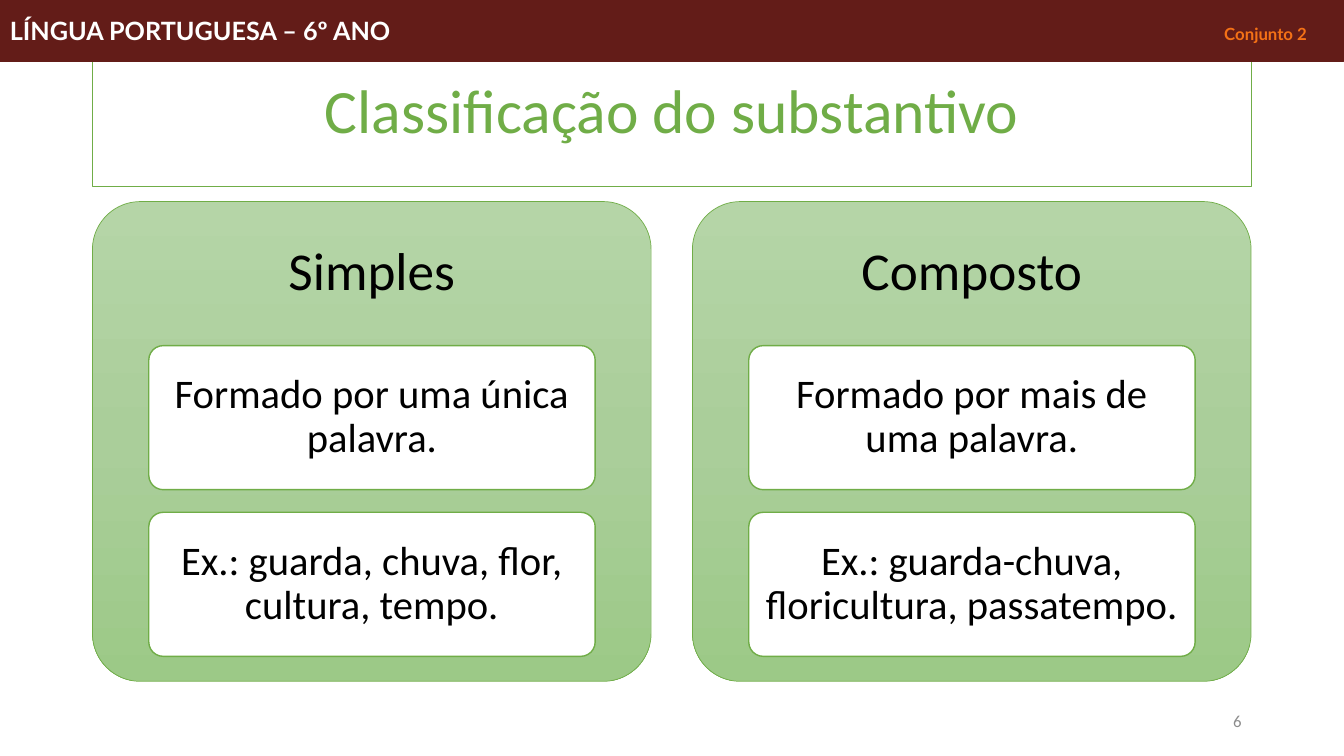
from copy import deepcopy
from dataclasses import dataclass

from lxml.etree import SubElement
from pptx import Presentation
from pptx.dml.color import RGBColor
from pptx.enum.shapes import MSO_SHAPE
from pptx.enum.text import MSO_ANCHOR, MSO_AUTO_SIZE, PP_ALIGN
from pptx.oxml.ns import qn
from pptx.shapes.autoshape import Shape
from pptx.slide import Slide
from pptx.util import Cm, Pt

COLORS = {
    "green": "70AD47",
    "panel_top": "B5D5A7",
    "panel_middle": "AACE9A",
    "panel_bottom": "9CC987",
    "maroon": "631C18",
    "orange": "F47116",
    "white": "FFFFFF",
    "black": "000000",
    "gray": "8C8C8C",
}
MARGIN, CONTENT_WIDTH = 2.33, 29.21
PANEL_TOP, PANEL_WIDTH, PANEL_HEIGHT, PANEL_PITCH = 5.08, 14.08, 12.09, 15.12
HEADING_HEIGHT = 3.63
CARD_INDENT, CARD_WIDTH, CARD_HEIGHT, CARD_PITCH = 1.42, 11.25, 3.63, 4.2


@dataclass(frozen=True)
class Box:
    left: float
    top: float
    width: float
    height: float

    def lengths(self) -> tuple[Cm, Cm, Cm, Cm]:
        return Cm(self.left), Cm(self.top), Cm(self.width), Cm(self.height)


@dataclass(frozen=True)
class NounClass:
    heading: str
    cards: tuple[str, ...]


NOUN_CLASSES = (
    NounClass("Simples", (
        "Formado por uma única palavra.",
        "Ex.: guarda, chuva, flor, cultura, tempo.",
    )),
    NounClass("Composto", (
        "Formado por mais de uma palavra.",
        "Ex.: guarda-chuva, floricultura, passatempo.",
    )),
)


def color(name: str) -> RGBColor:
    return RGBColor.from_string(COLORS[name])


def write(shape: Shape, text: str, size: float, color_name: str,
          align: PP_ALIGN = PP_ALIGN.CENTER, spacing: float = 0.9) -> None:
    frame = shape.text_frame
    frame.word_wrap = True
    frame.auto_size = MSO_AUTO_SIZE.NONE
    frame.vertical_anchor = MSO_ANCHOR.MIDDLE
    frame.text = text
    paragraph = frame.paragraphs[0]
    paragraph.alignment = align
    paragraph.line_spacing = spacing
    paragraph.font.name = "Calibri"
    paragraph.font.size = Pt(size)
    paragraph.font.color.rgb = color(color_name)


def set_insets(shape: Shape, horizontal: float, vertical: float) -> None:
    frame = shape.text_frame
    frame.margin_left = frame.margin_right = Cm(horizontal)
    frame.margin_top = frame.margin_bottom = Cm(vertical)


def add_block(slide: Slide, kind: MSO_SHAPE, box: Box, fill: str,
              line: str, line_width: float) -> Shape:
    block = slide.shapes.add_shape(kind, *box.lengths())
    block.shadow.inherit = False
    block.fill.solid()
    block.fill.fore_color.rgb = color(fill)
    block.line.color.rgb = color(line)
    block.line.width = Pt(line_width)
    if kind == MSO_SHAPE.ROUNDED_RECTANGLE:
        block.adjustments[0] = 0.1
    return block


def shade_panel(panel: Shape) -> None:
    panel.fill.gradient()
    panel.fill.gradient_angle = 270
    first_stop = panel._element.spPr.find(".//" + qn("a:gs"))
    first_stop.addnext(deepcopy(first_stop))
    shades = ("panel_top", "panel_middle", "panel_bottom")
    for index, (stop, shade) in enumerate(zip(panel.fill.gradient_stops, shades)):
        stop.position = index / 2
        stop.color.rgb = color(shade)


def add_noun_class(slide: Slide, noun_class: NounClass, left: float) -> None:
    panel_box = Box(left, PANEL_TOP, PANEL_WIDTH, PANEL_HEIGHT)
    panel = add_block(slide, MSO_SHAPE.ROUNDED_RECTANGLE, panel_box,
                      "panel_middle", "green", 0.5)
    shade_panel(panel)
    heading_box = Box(left, PANEL_TOP, PANEL_WIDTH, HEADING_HEIGHT)
    heading = slide.shapes.add_textbox(*heading_box.lengths())
    write(heading, noun_class.heading, 38, "black")
    set_insets(heading, 0.4, 0.4)
    for row, text in enumerate(noun_class.cards):
        card_top = PANEL_TOP + HEADING_HEIGHT + row * CARD_PITCH
        card_box = Box(left + CARD_INDENT, card_top, CARD_WIDTH, CARD_HEIGHT)
        card = add_block(slide, MSO_SHAPE.ROUNDED_RECTANGLE, card_box,
                         "white", "green", 1)
        write(card, text, 29, "black")
        set_insets(card, 0.2, 0.15)


def format_title(slide: Slide) -> None:
    title = slide.shapes.title
    title.left, title.top, title.width, title.height = Box(
        MARGIN, 1.02, CONTENT_WIDTH, 3.68).lengths()
    title.line.color.rgb = color("green")
    title.line.width = Pt(0.75)
    write(title, "Classificação do substantivo", 44, "green")


def add_header(slide: Slide) -> None:
    header = add_block(slide, MSO_SHAPE.RECTANGLE, Box(0, 0, 33.87, 1.55),
                       "maroon", "maroon", 0.75)
    write(header, "LÍNGUA PORTUGUESA – 6º ANO\t", 18, "white", PP_ALIGN.LEFT, 1)
    paragraph = header.text_frame.paragraphs[0]
    paragraph.font.name = "Lato"
    paragraph.font.bold = True
    unit = paragraph.add_run()
    unit.text = "Conjunto 2"
    unit.font.size = Pt(12)
    unit.font.color.rgb = color("orange")
    tab_list = SubElement(paragraph._p.get_or_add_pPr(), qn("a:tabLst"))
    SubElement(tab_list, qn("a:tab"), pos=str(Cm(32.69)), algn="r")
    paragraph._p.pPr.find(qn("a:defRPr")).addprevious(tab_list)


def main() -> None:
    presentation = Presentation()
    presentation.slide_width, presentation.slide_height = Cm(33.87), Cm(19.05)
    slide = presentation.slides.add_slide(presentation.slide_layouts[5])
    format_title(slide)
    for column, noun_class in enumerate(NOUN_CLASSES):
        add_noun_class(slide, noun_class, MARGIN + column * PANEL_PITCH)
    page_number = slide.shapes.add_textbox(*Box(23.92, 17.66, 7.62, 1.01).lengths())
    write(page_number, "6", 12, "gray", PP_ALIGN.RIGHT, 1)
    add_header(slide)
    presentation.save("out.pptx")


if __name__ == "__main__":
    main()
